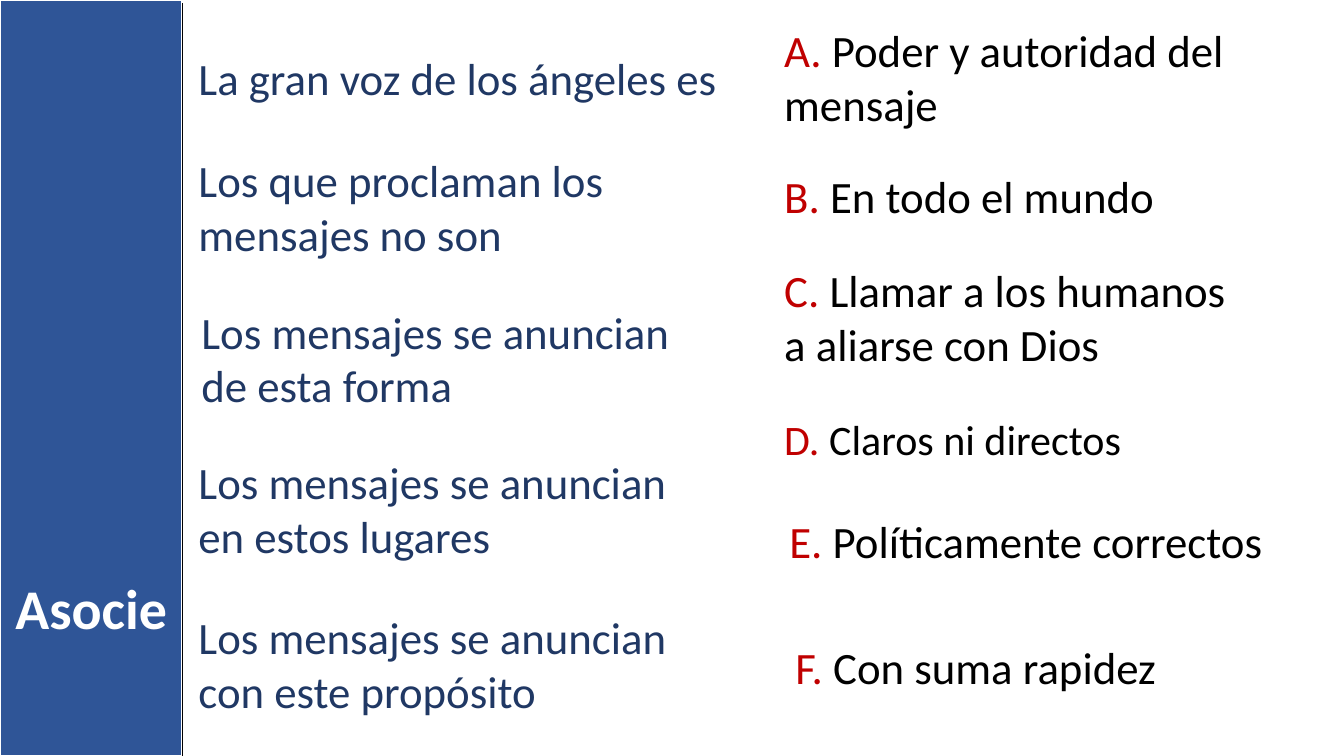
from lxml.etree import SubElement
from pptx import Presentation
from pptx.dml.color import RGBColor
from pptx.enum.shapes import MSO_CONNECTOR, MSO_SHAPE
from pptx.enum.text import MSO_ANCHOR, MSO_AUTO_SIZE, PP_ALIGN
from pptx.oxml.ns import qn
from pptx.util import Inches, Pt

COLORS = {
    "bar": "2F5597",
    "prompt": "203864",
    "letter": "C00000",
    "answer": "000000",
    "white": "FFFFFF",
}
FONT = "Calibri"
TITLE_ONLY = 5
BAR_WIDTH = 13.58

# Left, top and width in percent of the slide, then the number of lines
PROMPTS = [
    ("La gran voz de los ángeles es", 14.03, 6, 40.44, 1),
    ("Los que proclaman los mensajes no son", 14.03, 19.6, 38.71, 2),
    ("Los mensajes se anuncian de esta forma", 14.25, 39.6, 38.26, 2),
    ("Los mensajes se anuncian en estos lugares", 14.03, 59.47, 37.06, 2),
    ("Los mensajes se anuncian con este propósito", 14.03, 80, 38.71, 2),
]
# The same, followed by the text size in points
ANSWERS = [
    ("Poder y autoridad del mensaje", 57.61, 2.4, 35.11, 2, 32),
    ("En todo el mundo", 57.61, 21.6, 37.51, 1, 32),
    ("Llamar a los humanos a aliarse con Dios", 57.61, 34.13, 35.48, 2, 32),
    ("Claros ni directos", 57.61, 54, 29.63, 1, 30),
    ("Políticamente correctos", 57.99, 67.33, 36.83, 1, 32),
    ("Con suma rapidez", 58.44, 84, 31.13, 1, 32),
]


def color(name):
    return RGBColor.from_string(COLORS[name])


class MatchingSlide:
    """Draws on one slide; places and widths are percentages of its size."""

    def __init__(self, presentation):
        self.width = presentation.slide_width
        self.height = presentation.slide_height
        layout = presentation.slide_layouts[TITLE_ONLY]
        self.slide = presentation.slides.add_slide(layout)
        self.shapes = self.slide.shapes

    def x(self, percent):
        return round(self.width * percent / 100)

    def y(self, percent):
        return round(self.height * percent / 100)

    def text_height(self, lines, size):
        """Line height is 1.22 times the size, plus the two insets."""
        return Inches(0.1) + round(lines * Pt(size) * 1.22)

    def style_run(self, run, size, color_name, bold=False):
        run.font.name = FONT
        run.font.size = Pt(size)
        run.font.bold = bold
        run.font.color.rgb = color(color_name)

    def fit_frame(self, text_frame):
        text_frame.word_wrap = True
        text_frame.auto_size = MSO_AUTO_SIZE.SHAPE_TO_FIT_TEXT
        text_frame.vertical_anchor = MSO_ANCHOR.TOP

    def bar(self, width):
        shape = self.shapes.add_shape(
            MSO_SHAPE.RECTANGLE, 0, 0, self.x(width), self.height)
        shape.shadow.inherit = False
        shape.fill.solid()
        shape.fill.fore_color.rgb = color("bar")
        shape.line.color.rgb = color("white")
        shape.line.width = Pt(1.5)

    def title(self, text, top, width, size=40):
        shape = self.shapes.title
        shape.left, shape.top = 0, self.y(top)
        shape.width, shape.height = self.x(width), self.text_height(1, size)
        shape.text_frame.text = text
        self.fit_frame(shape.text_frame)
        paragraph = shape.text_frame.paragraphs[0]
        paragraph.alignment = PP_ALIGN.CENTER
        self.style_run(paragraph.runs[0], size, "white", bold=True)
        # Bring the title in front of the bar
        shape.element.getparent().append(shape.element)

    def text(self, parts, left, top, width, lines, size=32):
        """Add a text box from (text, color name) parts on one paragraph."""
        shape = self.shapes.add_textbox(
            self.x(left), self.y(top), self.x(width),
            self.text_height(lines, size))
        self.fit_frame(shape.text_frame)
        paragraph = shape.text_frame.paragraphs[0]
        for content, color_name in parts:
            run = paragraph.add_run()
            run.text = content
            self.style_run(run, size, color_name)

    def vertical_line(self, left, top):
        connector = self.shapes.add_connector(
            MSO_CONNECTOR.STRAIGHT, self.x(left), self.y(top),
            self.x(left), self.height)
        connector.line.color.rgb = color("answer")
        connector.line.width = Pt(1)
        SubElement(connector.element.spPr, qn("a:effectLst"))


def main():
    presentation = Presentation()
    presentation.slide_width = Inches(13.33)
    presentation.slide_height = Inches(7.5)

    matching = MatchingSlide(presentation)
    matching.bar(BAR_WIDTH)
    for prompt, *place in PROMPTS:
        matching.text([(prompt, "prompt")], *place)
    for letter, (answer, *place) in zip("ABCDEF", ANSWERS):
        parts = [(f"{letter}. ", "letter"), (answer, "answer")]
        matching.text(parts, *place)
    matching.title("Asocie", 75.2, BAR_WIDTH)
    matching.vertical_line(BAR_WIDTH, 0.4)

    presentation.save("out.pptx")


if __name__ == "__main__":
    main()
